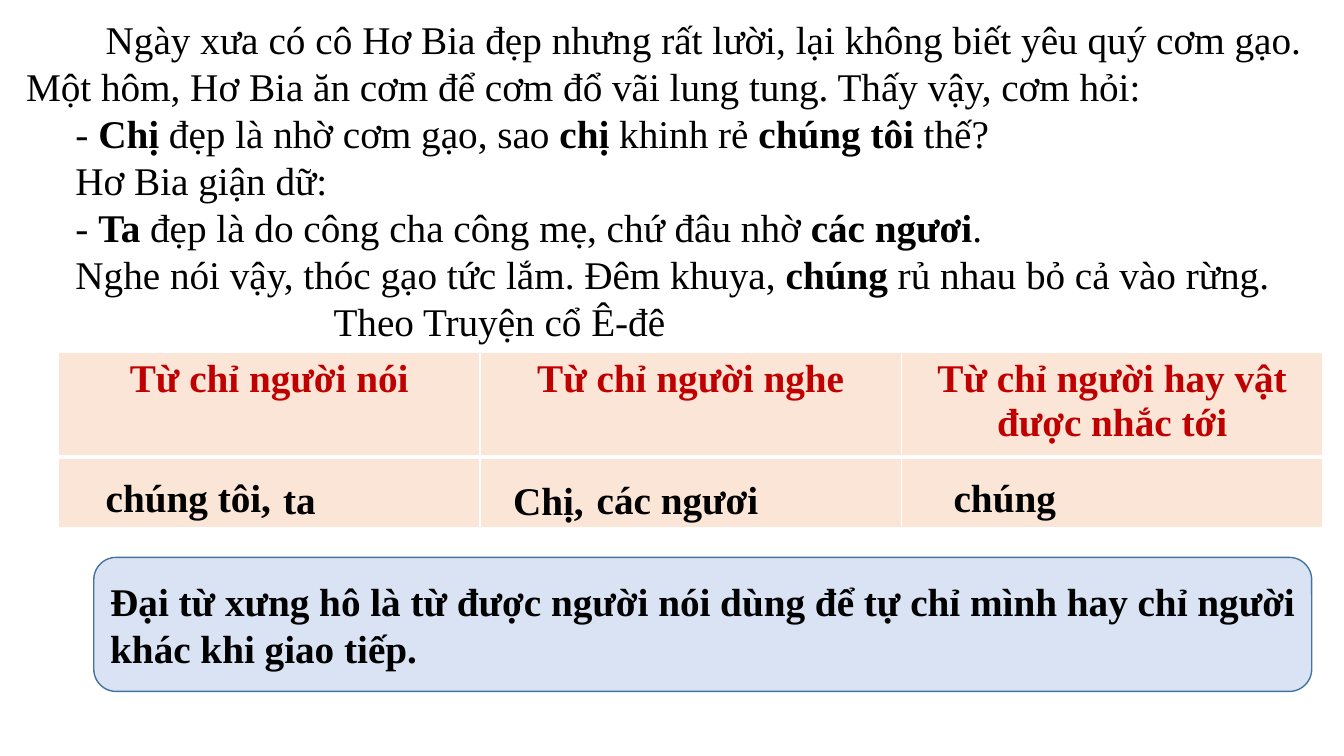
"""Build a Vietnamese grammar slide on personal pronouns."""
from pptx import Presentation
from pptx.dml.color import RGBColor
from pptx.enum.shapes import MSO_SHAPE
from pptx.enum.text import MSO_ANCHOR, PP_ALIGN
from pptx.oxml.ns import qn
from pptx.util import Inches, Pt
from lxml.etree import SubElement

C = {"text": "000000", "head": "C00000", "cell": "FBE5D6",
     "border": "FFFFFF", "box": "DAE3F3", "line": "43739E"}


def write(p, text, color="text", bold=True, align=PP_ALIGN.LEFT, indent=0):
    """Fill a paragraph; asterisks switch bold on and off."""
    p.alignment = align
    if indent:
        p._p.get_or_add_pPr().set("indent", str(Inches(indent)))
    for i, part in enumerate(text.split("*")):
        if part:
            r = p.add_run()
            r.text = part
            r.font.name = "Times New Roman"
            r.font.size = Pt(28)
            r.font.bold = bold or i % 2 == 1
            r.font.color.rgb = RGBColor.from_string(C[color])


prs = Presentation()
prs.slide_width, prs.slide_height = Inches(13.33), Inches(7.5)
s = prs.slides.add_slide(prs.slide_layouts[6])

story = [
    ("Ngày xưa có cô Hơ Bia đẹp nhưng rất lười, lại không biết yêu quý cơm gạo. "
     "Một hôm, Hơ Bia ăn cơm để cơm đổ vãi lung tung. Thấy vậy, cơm hỏi:", 0.79),
    ("- *Chị* đẹp là nhờ cơm gạo, sao *chị* khinh rẻ *chúng tôi* thế?", 0.49),
    ("Hơ Bia giận dữ:", 0.49),
    ("- *Ta* đẹp là do công cha công mẹ, chứ đâu nhờ *các ngươi*.", 0.49),
    ("Nghe nói vậy, thóc gạo tức lắm. Đêm khuya, *chúng* rủ nhau bỏ cả vào rừng.", 0.49),
    ("Theo Truyện cổ Ê-đê", 3.05),
]
tf = s.shapes.add_textbox(Inches(0.16), Inches(0.1), Inches(12.85), Inches(3.4)).text_frame
tf.word_wrap = True
for i, (text, indent) in enumerate(story):
    p = tf.add_paragraph() if i else tf.paragraphs[0]
    write(p, text, bold=False, align=PP_ALIGN.JUSTIFY, indent=indent)

heads = ["Từ chỉ người nói", "Từ chỉ người nghe", "Từ chỉ người hay vật được nhắc tới"]
table = s.shapes.add_table(2, 3, Inches(0.58), Inches(3.5), Inches(12.54), Inches(1.73)).table
for row, height in zip(table.rows, (1.03, 0.7)):
    row.height = Inches(height)
for r in range(2):
    for c, head in enumerate(heads):
        cell = table.cell(r, c)
        if r == 0:
            write(cell.text_frame.paragraphs[0], head, color="head", align=PP_ALIGN.CENTER)
        tcPr = cell._tc.get_or_add_tcPr()
        for side in "LRTB":
            thick = (r, side) in ((0, "B"), (1, "T"))
            ln = SubElement(tcPr, qn(f"a:ln{side}"), w=str(Pt(3 if thick else 1)))
            SubElement(SubElement(ln, qn("a:solidFill")), qn("a:srgbClr"), val=C["border"])
        cell.fill.solid()
        cell.fill.fore_color.rgb = RGBColor.from_string(C["cell"])

answers = [("chúng tôi,", 0.95, 4.65, 2.04), ("ta", 2.71, 4.67, 0.79),
           ("Chị,", 4.99, 4.68, 1.01), ("các ngươi", 5.82, 4.67, 2.32),
           ("chúng", 9.36, 4.65, 1.25)]
for text, x, y, w in answers:
    tf = s.shapes.add_textbox(Inches(x), Inches(y), Inches(w), Inches(0.57)).text_frame
    tf.word_wrap = True
    write(tf.paragraphs[0], text)

sp = s.shapes.add_shape(MSO_SHAPE.ROUNDED_RECTANGLE, Inches(0.93), Inches(5.53),
                        Inches(12.08), Inches(1.33))
sp.shadow.inherit = False
sp.fill.solid()
sp.fill.fore_color.rgb = RGBColor.from_string(C["box"])
sp.line.color.rgb = RGBColor.from_string(C["line"])
sp.line.width = Pt(1)
tf = sp.text_frame
tf.word_wrap = True
tf.vertical_anchor = MSO_ANCHOR.MIDDLE
write(tf.paragraphs[0], "Đại từ xưng hô là từ được người nói dùng để tự chỉ mình "
      "hay chỉ người khác khi giao tiếp.")

prs.save("out.pptx")
